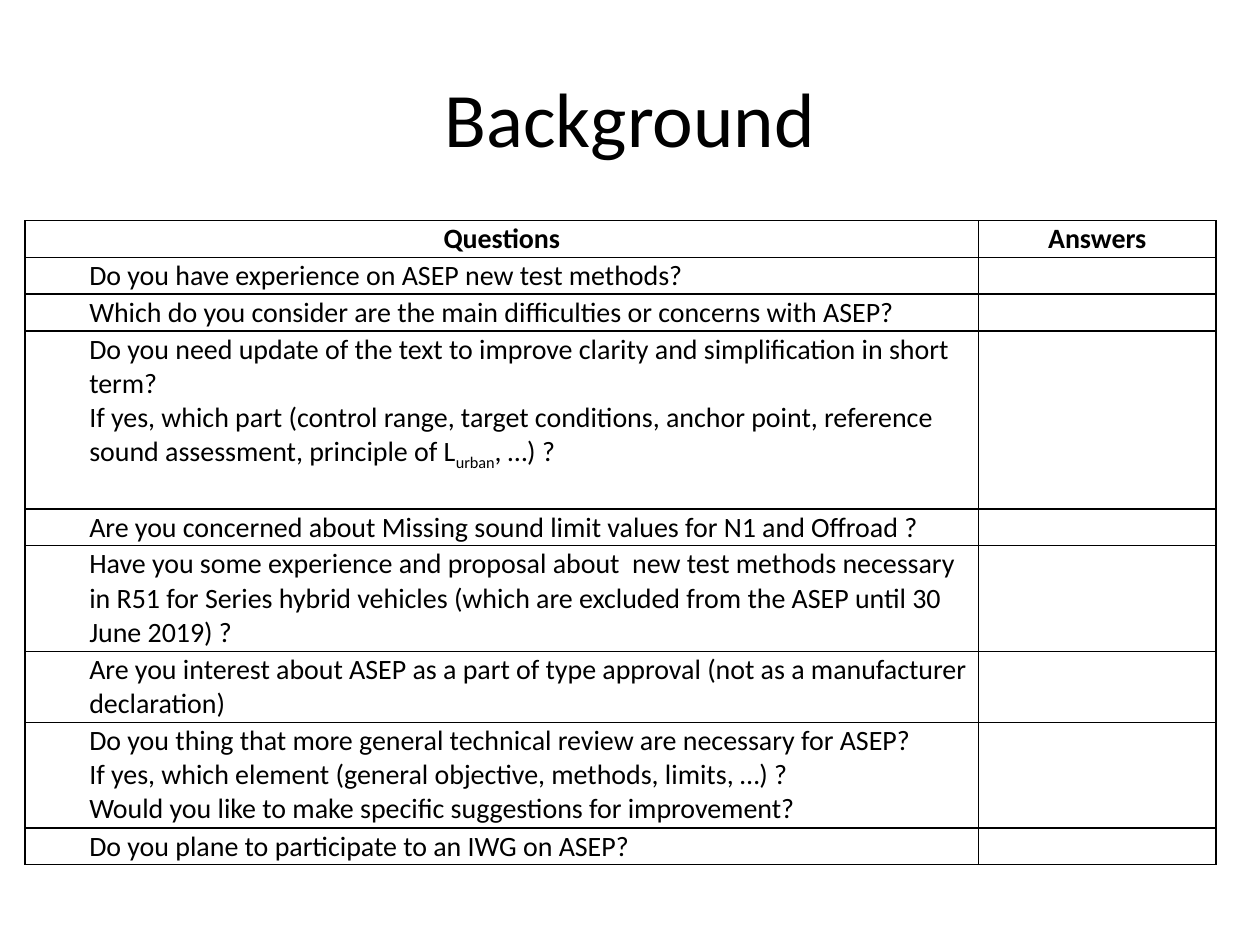
"""Build the Background slide with its table of questions and answers."""
from lxml.etree import SubElement
from pptx import Presentation
from pptx.dml.color import RGBColor
from pptx.enum.text import MSO_ANCHOR, PP_ALIGN
from pptx.oxml.ns import qn
from pptx.util import Cm, Pt

BLACK = RGBColor(0, 0, 0)
WHITE = RGBColor(255, 255, 255)
FONT = "Calibri"
SIZE = 16
SUB = "urban"
HEADS = ["Questions", "Answers"]
WIDTHS = [19.23, 4.78]
ROWS = [
    (0.74, ["Do you have experience on ASEP new test methods?"]),
    (0.74, ["Which do you consider are the main difficulties or concerns with ASEP?"]),
    (3.59, ["Do you need update of the text to improve clarity and simplification in short term?",
            "If yes, which part (control range, target conditions, anchor point, reference "
            "sound assessment, principle of L|urban|, …) ?"]),
    (0.74, ["Are you concerned about Missing sound limit values for N1 and Offroad ?"]),
    (2.13, ["Have you some experience and proposal about  new test methods necessary in R51 "
            "for Series hybrid vehicles (which are excluded from the ASEP until 30 June 2019) ?"]),
    (1.43, ["Are you interest about ASEP as a part of type approval "
            "(not as a manufacturer declaration)"]),
    (2.13, ["Do you thing that more general technical review are necessary for ASEP?",
            "If yes, which element (general objective, methods, limits, …) ?",
            "Would you like to make specific suggestions for improvement?"]),
    (0.74, ["Do you plane to participate to an IWG on ASEP?"]),
]


def add_run(para, text, size=SIZE, bold=False):
    """Add one styled run to a paragraph."""
    run = para.add_run()
    run.text = text
    run.font.name = FONT
    run.font.size = Pt(size)
    run.font.bold = bold
    run.font.color.rgb = BLACK
    return run


def add_title(slide, text):
    """Add the centred slide title."""
    box = slide.shapes.add_textbox(Cm(1.27), Cm(0.76), Cm(22.86), Cm(3.18))
    frame = box.text_frame
    frame.word_wrap = True
    frame.vertical_anchor = MSO_ANCHOR.MIDDLE
    para = frame.paragraphs[0]
    para.alignment = PP_ALIGN.CENTER
    add_run(para, text, 44)


def style_cell(cell):
    """Give a cell thin black borders, a white fill and tight margins."""
    cell.margin_left = cell.margin_right = Cm(0.03)
    cell.margin_top = cell.margin_bottom = Cm(0.03)
    props = cell._tc.get_or_add_tcPr()
    for side in ("lnL", "lnR", "lnT", "lnB"):
        line = SubElement(props, qn(f"a:{side}"), w=str(Pt(1)))
        fill = SubElement(line, qn("a:solidFill"))
        SubElement(fill, qn("a:srgbClr"), val=str(BLACK))
    cell.fill.solid()
    cell.fill.fore_color.rgb = WHITE


def fill_head(cell, text):
    """Write a bold centred heading."""
    para = cell.text_frame.paragraphs[0]
    para.alignment = PP_ALIGN.CENTER
    add_run(para, text, bold=True)


def fill_ask(cell, lines):
    """Write an indented question with line breaks and a subscript."""
    para = cell.text_frame.paragraphs[0]
    props = para._p.get_or_add_pPr()
    props.set("marL", str(Cm(1.27)))
    props.set("indent", "0")
    for index, line in enumerate(lines):
        if index:
            para.add_line_break()
        for part in line.split("|"):
            run = add_run(para, part)
            if part == SUB:
                run._r.get_or_add_rPr().set("baseline", "-25000")


def fill_blank(cell):
    """Keep an empty answer at the table's text size."""
    para = cell.text_frame.paragraphs[0]
    SubElement(para._p, qn("a:endParaRPr"), sz=str(SIZE * 100))


def add_grid(slide):
    """Add the table of questions with empty answers."""
    tall = [0.74] + [height for height, _ in ROWS]
    frame = slide.shapes.add_table(len(tall), len(WIDTHS), Cm(0.5), Cm(4.45),
                                   Cm(sum(WIDTHS)), Cm(sum(tall)))
    table = frame.table
    for column, width in zip(table.columns, WIDTHS):
        column.width = Cm(width)
    for row, height in zip(table.rows, tall):
        row.height = Cm(height)
    for cell in table.iter_cells():
        style_cell(cell)
    for index, text in enumerate(HEADS):
        fill_head(table.cell(0, index), text)
    for index, (_, lines) in enumerate(ROWS, 1):
        fill_ask(table.cell(index, 0), lines)
        fill_blank(table.cell(index, 1))


def main():
    """Build and save the slide."""
    deck = Presentation()
    deck.slide_width, deck.slide_height = Cm(25.4), Cm(19.05)
    slide = deck.slides.add_slide(deck.slide_layouts[6])
    add_title(slide, "Background")
    add_grid(slide)
    deck.save("out.pptx")


if __name__ == "__main__":
    main()
